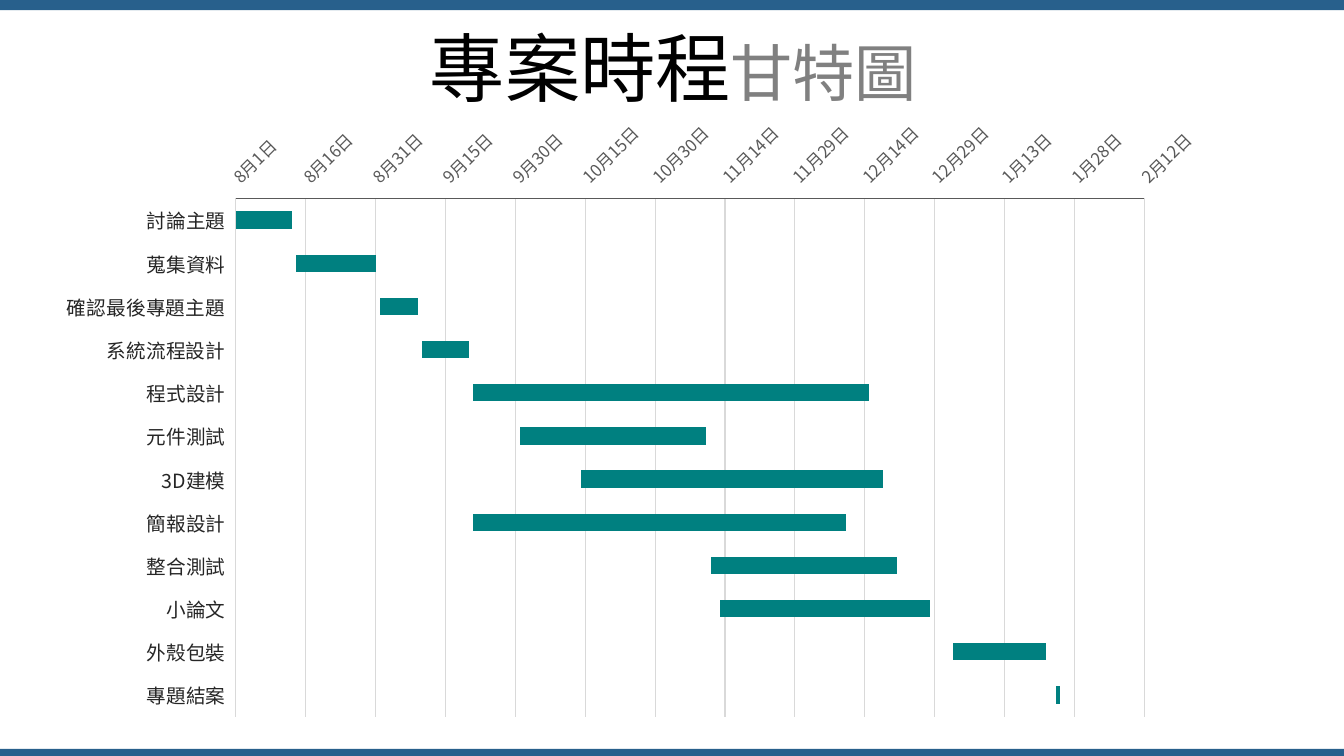
from lxml.etree import SubElement
from pptx import Presentation
from pptx.chart.data import CategoryChartData
from pptx.dml.color import RGBColor
from pptx.enum.chart import XL_CHART_TYPE, XL_TICK_LABEL_POSITION, XL_TICK_MARK
from pptx.enum.shapes import MSO_SHAPE
from pptx.enum.text import MSO_ANCHOR, PP_ALIGN
from pptx.oxml.ns import qn
from pptx.util import Inches, Pt

FACE = "Noto Sans CJK SC"
BLUE = RGBColor(0x28, 0x60, 0x8C)
TEAL = RGBColor(0x00, 0x80, 0x80)
BLACK = RGBColor(0x00, 0x00, 0x00)
GRAY = RGBColor(0x80, 0x80, 0x80)
INK = RGBColor(0x26, 0x26, 0x26)
DATE = RGBColor(0x59, 0x59, 0x59)
GRID = RGBColor(0xD9, 0xD9, 0xD9)

WIDE, HIGH = 13.33, 7.5
BANDS = [(0, 0.1), (7.43, 0.07)]
TITLE = [("專案時程", 53.6, BLACK), ("甘特圖", 44.4, GRAY)]
START, STEP, SPANS = 44774, 15, 13
TASKS = [
    ("討論主題", 44774, 12),
    ("蒐集資料", 44787, 17),
    ("確認最後專題主題", 44805, 8),
    ("系統流程設計", 44814, 10),
    ("程式設計", 44825, 85),
    ("元件測試", 44835, 40),
    ("3D建模", 44848, 65),
    ("簡報設計", 44825, 80),
    ("整合測試", 44876, 40),
    ("小論文", 44878, 45),
    ("外殼包裝", 44928, 20),
    ("專題結案", 44950, 1),
]
FRAME = (0.63, 1.16, 11.34, 6.07)
PLOT = (2.34, 1.97, 9.01, 5.14)


def style(font, size, color):
    font.size = Pt(size)
    font.name = FACE
    font.color.rgb = color


def write(para, text, size=18, color=BLACK):
    run = para.add_run()
    run.text = text
    style(run.font, size, color)


def add_band(slide, top, tall):
    band = slide.shapes.add_shape(
        MSO_SHAPE.RECTANGLE, 0, Inches(top), Inches(WIDE), Inches(tall))
    band.shadow.inherit = False
    band.fill.solid()
    band.fill.fore_color.rgb = BLUE
    band.line.fill.background()


def add_title(slide):
    box = slide.shapes.add_textbox(
        Inches(0.35), Inches(0.37), Inches(12.66), Inches(0.79))
    frame = box.text_frame
    frame.word_wrap = True
    frame.vertical_anchor = MSO_ANCHOR.MIDDLE
    para = frame.paragraphs[0]
    para.alignment = PP_ALIGN.CENTER
    para.line_spacing = 0.7
    para.space_before = Pt(10)
    for text, size, color in TITLE:
        write(para, text, size=size, color=color)


def place_plot(chart):
    area = chart._chartSpace.chart.plotArea
    old = area.find(qn("c:layout"))
    if old is not None:
        area.remove(old)
    layout = SubElement(area, qn("c:layout"))
    area.insert(0, layout)
    manual = SubElement(layout, qn("c:manualLayout"))
    left, top, wide, tall = FRAME
    x, y, w, h = PLOT
    parts = [("layoutTarget", "inner"), ("xMode", "edge"), ("yMode", "edge"),
             ("x", (x - left) / wide), ("y", (y - top) / tall),
             ("w", w / wide), ("h", h / tall)]
    for tag, value in parts:
        SubElement(manual, qn("c:" + tag)).set("val", str(value))


def add_gantt(slide):
    names, starts, days = zip(*TASKS)
    data = CategoryChartData()
    data.categories = names
    data.add_series("Series 1", starts)
    data.add_series("Series 2", days)
    chart = slide.shapes.add_chart(
        XL_CHART_TYPE.BAR_STACKED, *map(Inches, FRAME), data).chart
    chart.has_legend = False
    chart.has_title = False
    style(chart.font, 10, BLACK)

    plot = chart.plots[0]
    plot.gap_width = 150
    plot.overlap = 100
    plot.vary_by_categories = False
    blank, bars = plot.series
    blank.format.fill.background()
    bars.format.fill.solid()
    bars.format.fill.fore_color.rgb = TEAL

    rows, dates = chart.category_axis, chart.value_axis
    for axis, size, color in [(rows, 14, INK), (dates, 12, DATE)]:
        axis.major_tick_mark = XL_TICK_MARK.NONE
        axis.minor_tick_mark = XL_TICK_MARK.NONE
        axis.tick_label_position = XL_TICK_LABEL_POSITION.LOW
        style(axis.tick_labels.font, size, color)
    rows.reverse_order = True
    rows.format.line.fill.background()
    dates.minimum_scale = START
    dates.maximum_scale = START + STEP * SPANS
    dates.major_unit = STEP
    dates.tick_labels.number_format = 'm"月"d"日"'
    dates.tick_labels.number_format_is_linked = False
    dates._element.txPr.bodyPr.set("rot", "-2700000")
    dates.has_major_gridlines = True
    for line, color in [(dates.format.line, DATE),
                        (dates.major_gridlines.format.line, GRID)]:
        line.color.rgb = color
        line.width = Pt(0.75)
    place_plot(chart)
    return chart


def set_asian(root):
    for latin in list(root.iter(qn("a:latin"))):
        asian = latin.makeelement(qn("a:ea"), {"typeface": FACE})
        latin.addnext(asian)


def main():
    deck = Presentation()
    deck.slide_width, deck.slide_height = Inches(WIDE), Inches(HIGH)
    slide = deck.slides.add_slide(deck.slide_layouts[6])
    for top, tall in BANDS:
        add_band(slide, top, tall)
    add_title(slide)
    chart = add_gantt(slide)
    set_asian(slide.shapes._spTree)
    set_asian(chart._chartSpace)
    deck.save("out.pptx")


if __name__ == "__main__":
    main()
